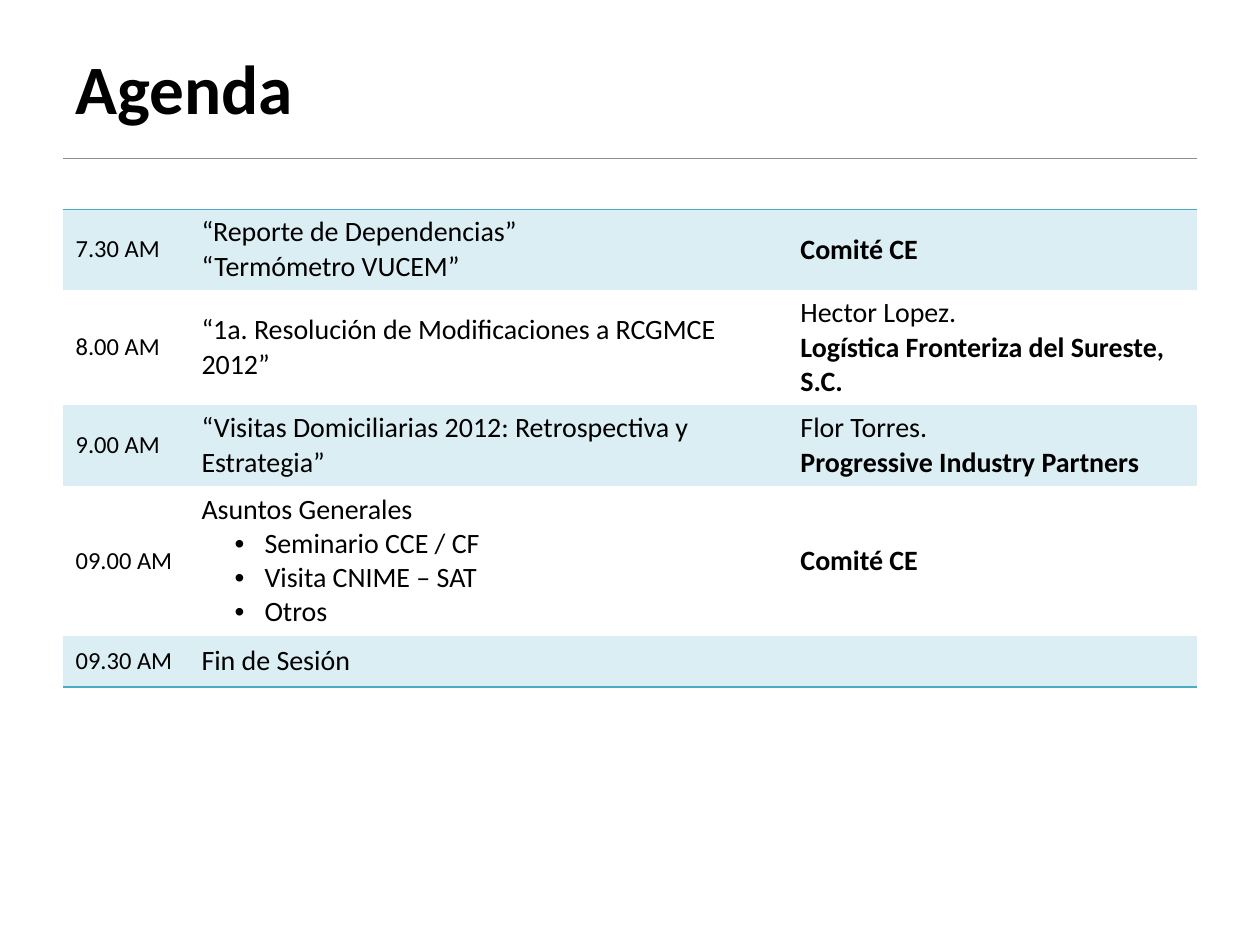
import pptx
import pptx.dml.color
import pptx.enum.text
import pptx.oxml
import pptx.oxml.ns
import pptx.util

PX = 914400 // 126
BLACK = pptx.dml.color.RGBColor(0, 0, 0)
WHITE = pptx.dml.color.RGBColor(0xFF, 0xFF, 0xFF)
BAND = pptx.dml.color.RGBColor(0xDB, 0xEE, 0xF4)
TEAL = pptx.dml.color.RGBColor(0x4B, 0xAC, 0xC6)
GRAY = pptx.dml.color.RGBColor(0x8C, 0x8C, 0x8C)
FONT = "Calibri"
NO_STYLE = "{2D5ABB26-0587-4C30-8999-92F81FD0307C}"
MIDDLE = pptx.enum.text.MSO_ANCHOR.MIDDLE

TITLE = "Agenda"
LEFT, WIDTH = 63, 1134
TITLE_TOP, TITLE_HEIGHT = 38, 98
TABLE_TOP = 158
COLUMN_WIDTHS = [126, 599, 409]
HEADER_HEIGHT = 51

# Each line is (text, style); style is "", "bold" or "bullet".
# Each session is (row height, time, topic lines, speaker lines).
SESSIONS = [
    (81, "7.30 AM",
     [("“Reporte de Dependencias”", ""), ("“Termómetro VUCEM”", "")],
     [("Comité CE", "bold")]),
    (115, "8.00 AM",
     [("“1a. Resolución de Modificaciones a RCGMCE 2012”", "")],
     [("Hector Lopez.", ""), ("Logística Fronteriza del Sureste, S.C.", "bold")]),
    (81, "9.00 AM",
     [("“Visitas Domiciliarias 2012: Retrospectiva y Estrategia”", "")],
     [("Flor Torres.", ""), ("Progressive Industry Partners", "bold")]),
    (150, "09.00 AM",
     [("Asuntos Generales", ""), ("Seminario CCE / CF", "bullet"),
      ("Visita CNIME – SAT", "bullet"), ("Otros", "bullet")],
     [("Comité CE", "bold")]),
    (51, "09.30 AM", [("Fin de Sesión", "")], []),
]


def px(n):
    return pptx.util.Emu(n * PX)


def add_bullet(p):
    pPr = p._p.get_or_add_pPr()
    pPr.set("lvl", "1")
    pPr.set("marL", str(px(63)))
    pPr.set("indent", str(px(-30)))
    for tag, attribute, value in (("buFont", "typeface", "Arial"), ("buChar", "char", "•")):
        bullet = pptx.oxml.parse_xml(f"<a:{tag} {pptx.oxml.ns.nsdecls('a')}/>")
        bullet.set(attribute, value)
        pPr.append(bullet)


def write_lines(tf, lines, size):
    tf.text = "\n".join(text for text, style in lines)
    for p, (text, style) in zip(tf.paragraphs, lines):
        if style == "bullet":
            add_bullet(p)
        for r in p.runs:
            r.font.name = FONT
            r.font.size = pptx.util.Pt(size)
            r.font.bold = style == "bold"
            r.font.color.rgb = BLACK


def set_borders(cell, width, **colors):
    """Draw borders, width in points, on the given sides (T before B, as the schema orders them)."""
    tcPr = cell._tc.get_or_add_tcPr()
    for i, (side, color) in enumerate(colors.items()):
        tcPr.insert(i, pptx.oxml.parse_xml(
            f'<a:ln{side} {pptx.oxml.ns.nsdecls("a")} w="{pptx.util.Pt(width)}"><a:solidFill>'
            f'<a:srgbClr val="{color}"/></a:solidFill></a:ln{side}>'))


def add_title(slide):
    s = slide.shapes.add_textbox(px(LEFT), px(TITLE_TOP), px(WIDTH), px(TITLE_HEIGHT))
    s.fill.solid()
    s.fill.fore_color.rgb = WHITE
    tf = s.text_frame
    tf.word_wrap = True
    tf.vertical_anchor = MIDDLE
    write_lines(tf, [(TITLE, "bold")], 39.6)


def add_agenda(slide):
    heights = [HEADER_HEIGHT] + [session[0] for session in SESSIONS]
    table = slide.shapes.add_table(
        len(heights), len(COLUMN_WIDTHS), px(LEFT), px(TABLE_TOP),
        px(WIDTH), px(sum(heights))).table
    table.first_row = table.horz_banding = False
    table._tbl.tblPr.find(pptx.oxml.ns.qn("a:tableStyleId")).text = NO_STYLE
    for column, width in zip(table.columns, COLUMN_WIDTHS):
        column.width = px(width)
    for row, height in zip(table.rows, heights):
        row.height = px(height)

    for i, (_, time, topic, speaker) in enumerate(SESSIONS, 1):
        contents = [([(time, "")], 14), (topic, 16), (speaker, 16)]
        for cell, (lines, size) in zip(table.rows[i].cells, contents):
            cell.vertical_anchor = MIDDLE
            write_lines(cell.text_frame, lines, size)
            if i % 2:
                cell.fill.solid()
                cell.fill.fore_color.rgb = BAND
            else:
                cell.fill.background()

    for cell in table.rows[0].cells:
        cell.fill.background()
        set_borders(cell, 0.5, T=GRAY, B=TEAL)
    for cell in table.rows[len(SESSIONS)].cells:
        set_borders(cell, 1, B=TEAL)


def main():
    prs = pptx.Presentation()
    prs.slide_width, prs.slide_height = px(1260), px(945)
    slide = prs.slides.add_slide(prs.slide_layouts[6])
    add_title(slide)
    add_agenda(slide)
    prs.save("out.pptx")


if __name__ == "__main__":
    main()
